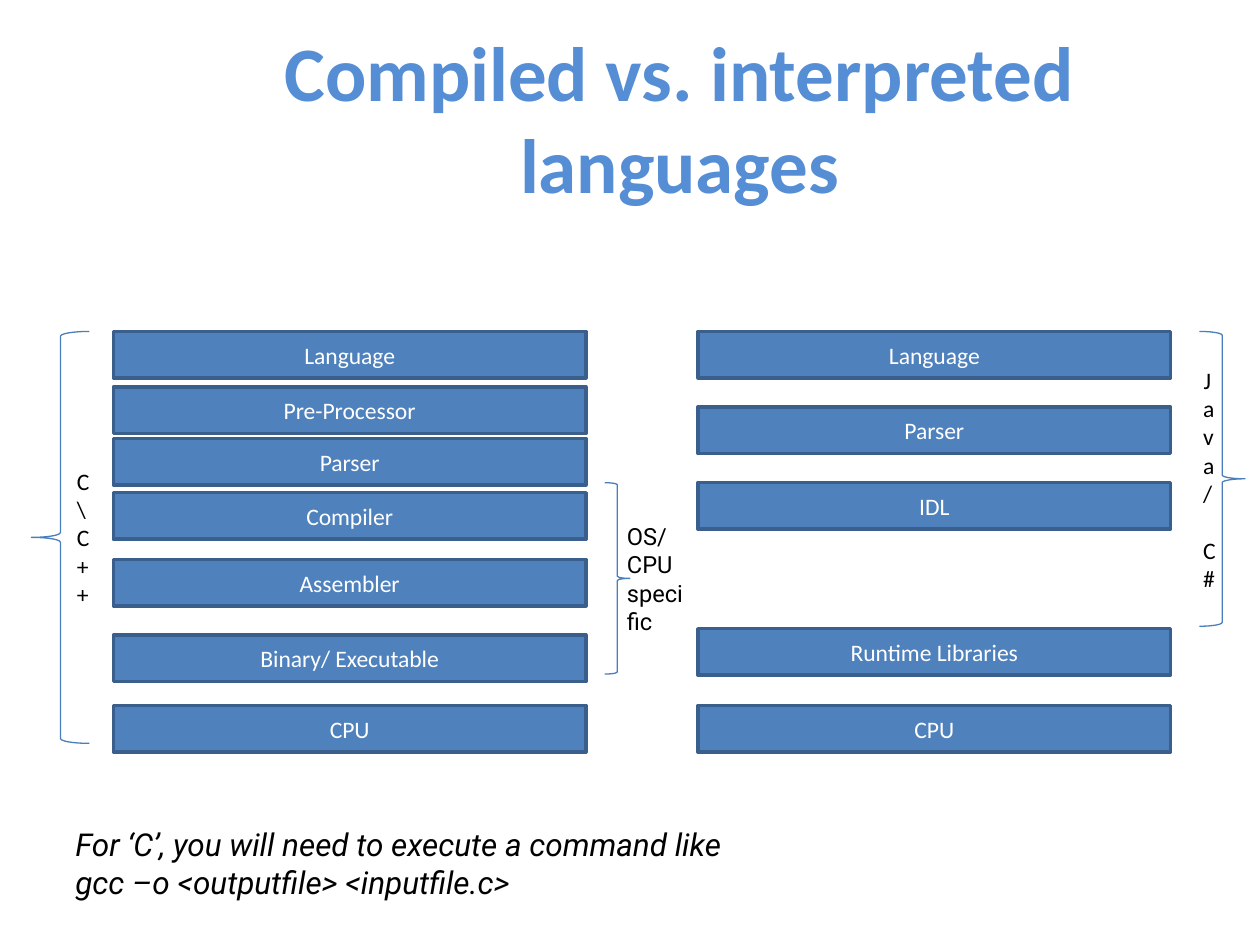
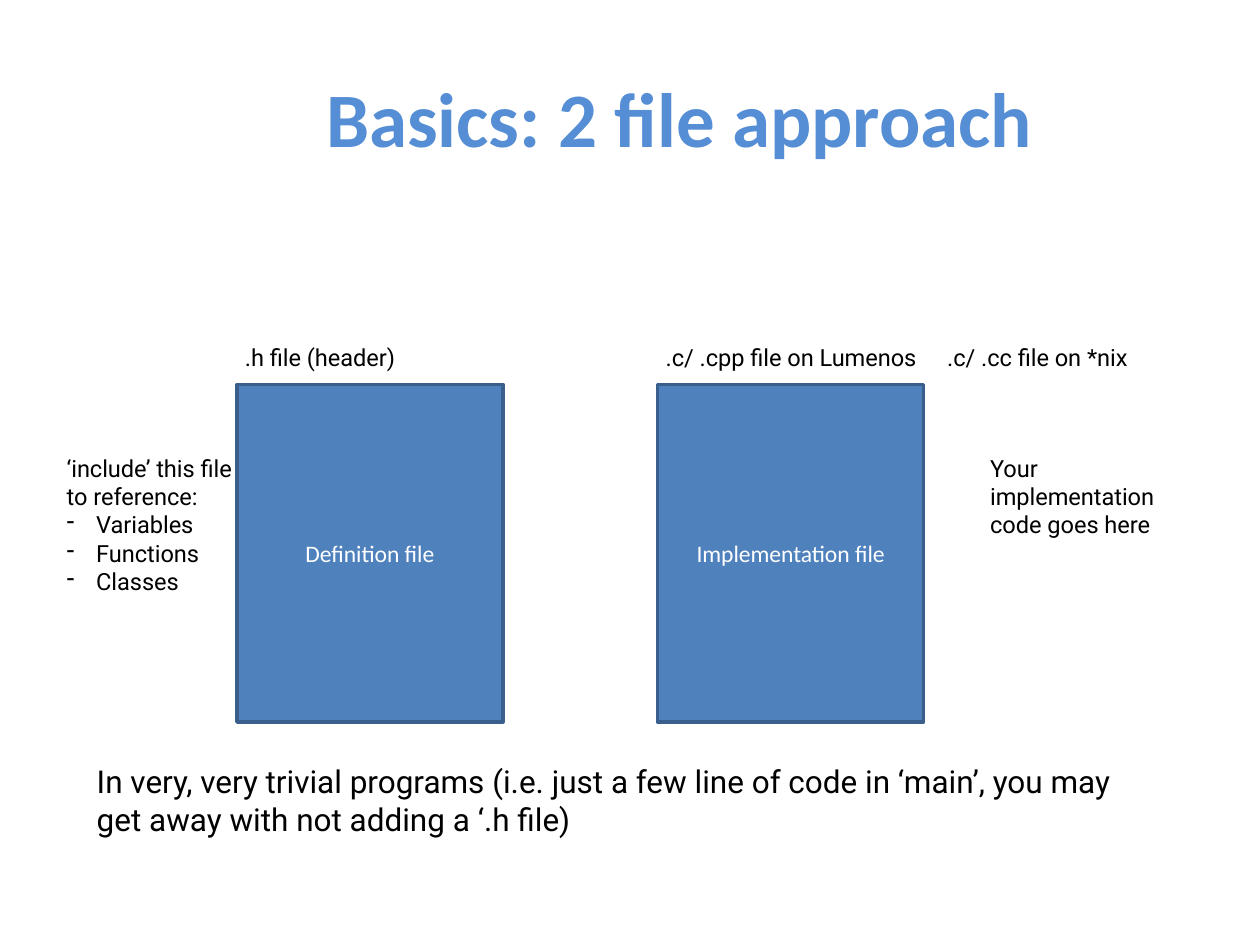
from lxml import etree
from pptx import Presentation
from pptx.dml.color import RGBColor
from pptx.enum.shapes import MSO_SHAPE
from pptx.enum.text import MSO_ANCHOR, MSO_AUTO_SIZE, PP_ALIGN
from pptx.oxml.ns import qn
from pptx.util import Pt

RECTANGLE = MSO_SHAPE.RECTANGLE
LEFT_BRACE, RIGHT_BRACE = MSO_SHAPE.LEFT_BRACE, MSO_SHAPE.RIGHT_BRACE
CENTER, LEFT = PP_ALIGN.CENTER, PP_ALIGN.LEFT
MIDDLE, TOP = MSO_ANCHOR.MIDDLE, MSO_ANCHOR.TOP
NO_FIT, GROW = MSO_AUTO_SIZE.NONE, MSO_AUTO_SIZE.SHAPE_TO_FIT_TEXT

COLORS = {
    "title": "558ED5",
    "fill": "4F81BD",
    "outline": "3A5F8C",
    "brace": "4B7EBC",
    "light": "FFFFFF",
    "text": "000000",
}
HEADING_FONT, NOTE_FONT = "Calibri", "Roboto"
LABEL_SIZE, NOTE_SIZE, TITLE_SIZE = 13.5, 18, 44
TITLE_ONLY = 5
BULLET_INDENT = Pt(16.9)

# Stages of each tool chain, with the offset of each from the top of its stack
STAGE_WIDTH, STAGE_HEIGHT = 270, 26.6
COMPILED_STAGES = [
    ("Language", 0), ("Pre-Processor", 31.7), ("Parser", 61.2),
    ("Compiler", 92.2), ("Assembler", 130.3),
    ("Binary/ Executable", 173.5), ("CPU", 213.8),
]
INTERPRETED_STAGES = [
    ("Language", 0), ("Parser", 43.2), ("IDL", 86.4),
    ("Runtime Libraries", 169.9), ("CPU", 213.8),
]


def color(name):
    return RGBColor.from_string(COLORS[name])


def points(box):
    return [Pt(length) for length in box]


def add_run(paragraph, text, size, font, color_name, bold=False, italic=False):
    run = paragraph.add_run()
    run.text = text
    run.font.size = Pt(size)
    run.font.name = font
    run.font.bold = bold
    run.font.italic = italic
    run.font.color.rgb = color(color_name)


def add_dash(paragraph):
    properties = paragraph._p.get_or_add_pPr()
    properties.set("marL", str(BULLET_INDENT))
    properties.set("indent", str(-BULLET_INDENT))
    etree.SubElement(properties, qn("a:buChar")).set("char", "-")


def add_title_slide(presentation, title):
    slide = presentation.slides.add_slide(presentation.slide_layouts[TITLE_ONLY])
    shape = slide.shapes.title
    shape.left, shape.top, shape.width, shape.height = points((92.9, 21.6, 591.1, 90))
    frame = shape.text_frame
    frame.auto_size = NO_FIT
    frame.vertical_anchor = MIDDLE
    paragraph = frame.paragraphs[0]
    paragraph.alignment = CENTER
    add_run(paragraph, title, TITLE_SIZE, HEADING_FONT, "title", bold=True)
    return slide


def add_figure(slide, preset, box, text, line_name, line_width, text_color):
    shape = slide.shapes.add_shape(preset, *points(box))
    shape.shadow.inherit = False
    shape.line.color.rgb = color(line_name)
    shape.line.width = Pt(line_width)
    if text:
        frame = shape.text_frame
        frame.word_wrap = True
        frame.vertical_anchor = MIDDLE
        paragraph = frame.paragraphs[0]
        paragraph.alignment = CENTER
        add_run(paragraph, text, LABEL_SIZE, HEADING_FONT, text_color)
    return shape


def add_block(slide, box, text):
    block = add_figure(slide, RECTANGLE, box, text, "outline", 2, "light")
    block.fill.solid()
    block.fill.fore_color.rgb = color("fill")


def add_brace(slide, preset, box, text=""):
    brace = add_figure(slide, preset, box, text, "brace", 0.75, "text")
    brace.fill.background()


def add_note(slide, box, lines, size=LABEL_SIZE, italic=False, dashed=()):
    frame = slide.shapes.add_textbox(*points(box)).text_frame
    frame.word_wrap = True
    frame.auto_size = GROW
    frame.vertical_anchor = TOP
    for index, line in enumerate([*lines, *dashed]):
        paragraph = frame.add_paragraph() if index else frame.paragraphs[0]
        paragraph.alignment = LEFT
        if index >= len(lines):
            add_dash(paragraph)
        add_run(paragraph, line, size, NOTE_FONT, "text", italic=italic)


def add_stack(slide, left, top, stages):
    for name, offset in stages:
        add_block(slide, (left, top + offset, STAGE_WIDTH, STAGE_HEIGHT), name)


def add_file(slide, left, top, caption, name):
    add_block(slide, (left, top, 152, 193), name)
    add_note(slide, (left - 2.5, top - 27.4, 172, 23.8), [caption])


def build_languages_slide(presentation):
    slide = add_title_slide(presentation, "Compiled vs. interpreted languages")
    top = 189.4

    # Compiled languages
    add_stack(slide, 64.8, top, COMPILED_STAGES)
    add_brace(slide, LEFT_BRACE, (18, top, 33.1, 235.4), "C\\C++")
    add_brace(slide, RIGHT_BRACE, (345.6, top + 86.4, 14.4, 109.4))
    add_note(slide, (351.2, top + 105.2, 47.5, 72.7), ["OS/ CPU specific"])

    # Interpreted languages
    add_stack(slide, 398.9, top, INTERPRETED_STAGES)
    add_brace(slide, RIGHT_BRACE, (685.4, top, 26, 168.5), "Java/ C#")

    # Command to compile
    command = ["For ‘C’, you will need to execute a command like",
               "gcc –o <outputfile> <inputfile.c>"]
    add_note(slide, (36, 468, 635.8, 51), command, NOTE_SIZE, italic=True)


def build_files_slide(presentation):
    slide = add_title_slide(presentation, "Basics: 2 file approach")
    top = 219.6

    # Header file
    add_file(slide, 135.4, top, ".h file (header)", "Definition file")
    add_note(slide, (31, top + 36, 113, 89.3), ["‘include’ this file to reference:"],
             dashed=["Variables", "Functions", "Classes"])

    # Source file
    add_file(slide, 375.8, top, ".c/ .cpp file on Lumenos", "Implementation file")
    add_note(slide, (534.2, top - 27.4, 172, 23.8), [".c/ .cc file on *nix"])
    add_note(slide, (558.7, top + 36, 130.3, 56.2), ["Your implementation code goes here"])

    # Closing remark
    remark = ("In very, very trivial programs (i.e. just a few line of code in ‘main’, "
              "you may get away with not adding a ‘.h file)")
    add_note(slide, (48.2, 432, 617.8, 51), [remark], NOTE_SIZE)


def main():
    presentation = Presentation()
    presentation.slide_width, presentation.slide_height = Pt(720), Pt(540)
    build_languages_slide(presentation)
    build_files_slide(presentation)
    presentation.save("out.pptx")


if __name__ == "__main__":
    main()
